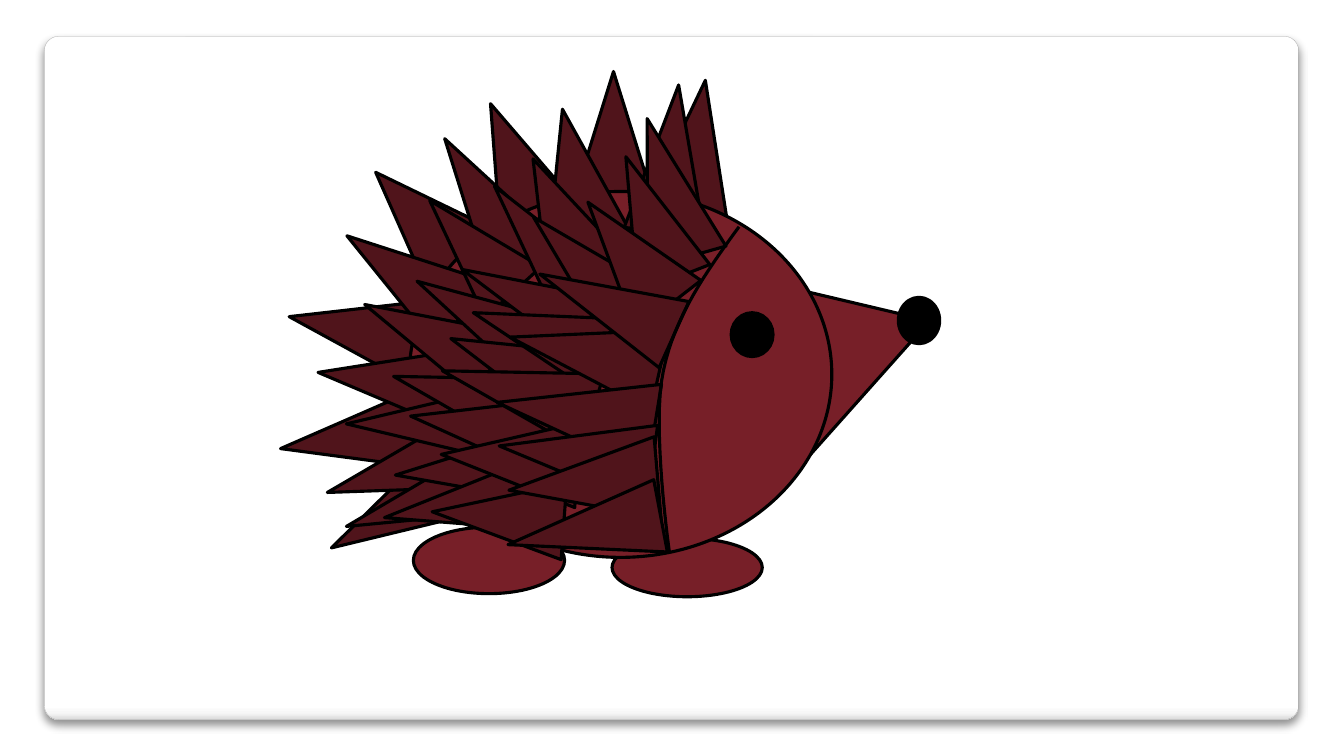
from lxml import etree
from pptx import Presentation
from pptx.dml.color import RGBColor
from pptx.enum.shapes import MSO_SHAPE
from pptx.oxml.ns import qn
from pptx.util import Inches, Pt

OVAL = MSO_SHAPE.OVAL
TRIANGLE = MSO_SHAPE.ISOSCELES_TRIANGLE
ROUNDED = MSO_SHAPE.ROUNDED_RECTANGLE
SKIN = RGBColor(0x77, 0x1F, 0x28)
SPINE = RGBColor(0x50, 0x14, 0x1B)
BLACK = RGBColor(0, 0, 0)
WHITE = RGBColor(0xFF, 0xFF, 0xFF)
PANEL_EDGE = RGBColor(0xA4, 0xA4, 0xA4)
PANEL_STOPS = [(0, "FFFFFF"), (98, "FFFFFF"), (99, "F7F7F7"), (100, "DADADA")]

presentation = Presentation()
presentation.slide_width = Inches(13.33)
presentation.slide_height = Inches(7.5)
slide = presentation.slides.add_slide(presentation.slide_layouts[6])


def draw(preset, box, fill, rotation=0, line=BLACK, weight=2.25):
    shape = slide.shapes.add_shape(preset, *[Inches(length) for length in box])
    shape.rotation = rotation
    shape.shadow.inherit = False
    shape.fill.solid()
    shape.fill.fore_color.rgb = fill
    shape.line.color.rgb = line
    shape.line.width = Pt(weight)
    return shape


def draw_spines(spines):
    for *box, rotation in spines:
        draw(TRIANGLE, box, SPINE, rotation)


panel = draw(ROUNDED, (0.44, 0.36, 12.44, 6.78), WHITE, line=PANEL_EDGE, weight=0.16)
panel.adjustments[0] = 0.021
panel.fill.gradient()
panel.fill.gradient_angle = 270
stop_list = panel._element.spPr.find(".//" + qn("a:gsLst"))
for stop in list(stop_list):
    stop_list.remove(stop)
for position, color in PANEL_STOPS:
    stop = etree.SubElement(stop_list, qn("a:gs"), pos=str(position * 1000))
    etree.SubElement(stop, qn("a:srgbClr"), val=color)
effects = panel._element.spPr.find(qn("a:effectLst"))
shadow = etree.SubElement(
    effects, qn("a:outerShdw"), blurRad=str(Pt(6)), dist=str(Pt(4)),
    dir="5400000", algn="ctr", rotWithShape="0")
shadow_color = etree.SubElement(shadow, qn("a:srgbClr"), val="000000")
etree.SubElement(shadow_color, qn("a:alpha"), val="44000")

draw(OVAL, (4.1, 5.23, 1.5, 0.66), SKIN)
draw(TRIANGLE, (6.88, 2.42, 2.6, 2.18), SKIN, 72.5)
draw(OVAL, (6.07, 5.34, 1.49, 0.58), SKIN)
draw(OVAL, (8.91, 2.95, 0.41, 0.46), BLACK)

draw_spines([
    (3.7, 1.52, 0.99, 1.35, 316),
    (4.69, 0.98, 0.84, 1.28, 337.5),
    (5.67, 0.71, 0.83, 1.33, 0),
    (6.49, 0.79, 0.82, 1.33, 8.3),
    (3.11, 2.58, 0.88, 1.39, 281.1),
    (3.11, 3.59, 0.84, 1.51, 262),
])

draw(OVAL, (4.06, 1.9, 4.19, 3.63), SKIN)
draw(OVAL, (7.26, 3.11, 0.4, 0.42), BLACK, weight=3.35)

draw_spines([
    (3.52, 4.35, 0.81, 1.46, 240.9),
    (5.3, 1.07, 0.82, 1.31, 348.4),
    (4.41, 1.26, 0.8, 1.49, 327.6),
    (3.6, 2.04, 0.82, 1.38, 304.5),
    (3.45, 3.08, 0.8, 1.4, 277),
    (3.56, 4.01, 0.69, 1.37, 253.9),
    (4.3, 1.83, 0.75, 1.23, 317.8),
    (6.26, 0.84, 0.8, 1.46, 5.6),
    (3.89, 2.62, 0.72, 1.4, 295.3),
    (5.14, 1.52, 0.81, 1.23, 335.2),
    (6.21, 1.15, 0.81, 1.43, 344.1),
    (3.79, 3.53, 0.64, 1.35, 270),
    (3.8, 4.28, 0.64, 1.44, 252),
    (4.42, 2.41, 0.72, 1.47, 298.9),
    (5.01, 1.69, 0.69, 1.44, 321.3),
    (4.2, 3.25, 0.68, 1.32, 285.5),
    (4.22, 4.09, 0.57, 1.17, 266.3),
    (6.06, 1.51, 0.77, 1.3, 338.6),
    (4.89, 2.27, 0.63, 1.36, 294),
    (4.69, 2.98, 0.68, 1.2, 291.6),
    (4.36, 3.57, 0.73, 1.32, 278.9),
    (5.43, 1.94, 0.76, 1.46, 314.8),
    (4.21, 4.26, 0.71, 1.52, 261.3),
    (5.82, 1.87, 0.82, 1.3, 322.2),
    (4.96, 2.63, 0.77, 1.37, 288.1),
    (4.74, 3.11, 0.79, 1.55, 285.4),
    (4.63, 3.88, 0.85, 1.36, 274.4),
    (4.56, 4.47, 0.76, 1.31, 274.2),
    (5.39, 2.75, 0.82, 1.52, 282.6),
    (5.66, 2.29, 0.72, 1.46, 294.3),
    (5.27, 3.33, 0.88, 1.58, 279.3),
    (5.3, 3.76, 0.82, 1.53, 277.6),
    (5.38, 4.06, 0.81, 1.48, 265.1),
    (5.43, 4.49, 0.73, 1.54, 259.3),
])

FACE_CURVES = [
    [(7.33, 2.25), (7.01, 2.69), (6.69, 3.14), (6.58, 3.68)],
    [(6.58, 3.68), (6.46, 4.21), (6.64, 5.48), (6.64, 5.48)],
]
STEPS = 16
face_points = []
for curve in FACE_CURVES:
    for step in range(1, STEPS + 1):
        t = step / STEPS
        weights = ((1 - t) ** 3, 3 * t * (1 - t) ** 2, 3 * t ** 2 * (1 - t), t ** 3)
        face_points.append([
            Inches(sum(weight * point[axis] for weight, point in zip(weights, curve)))
            for axis in (0, 1)])
start_x, start_y = FACE_CURVES[0][0]
builder = slide.shapes.build_freeform(Inches(start_x), Inches(start_y))
builder.add_line_segments(face_points, close=False)
face_edge = builder.convert_to_shape()
face_edge.shadow.inherit = False
face_edge.fill.background()
face_edge.line.color.rgb = BLACK
face_edge.line.width = Pt(2.25)

presentation.save("out.pptx")
